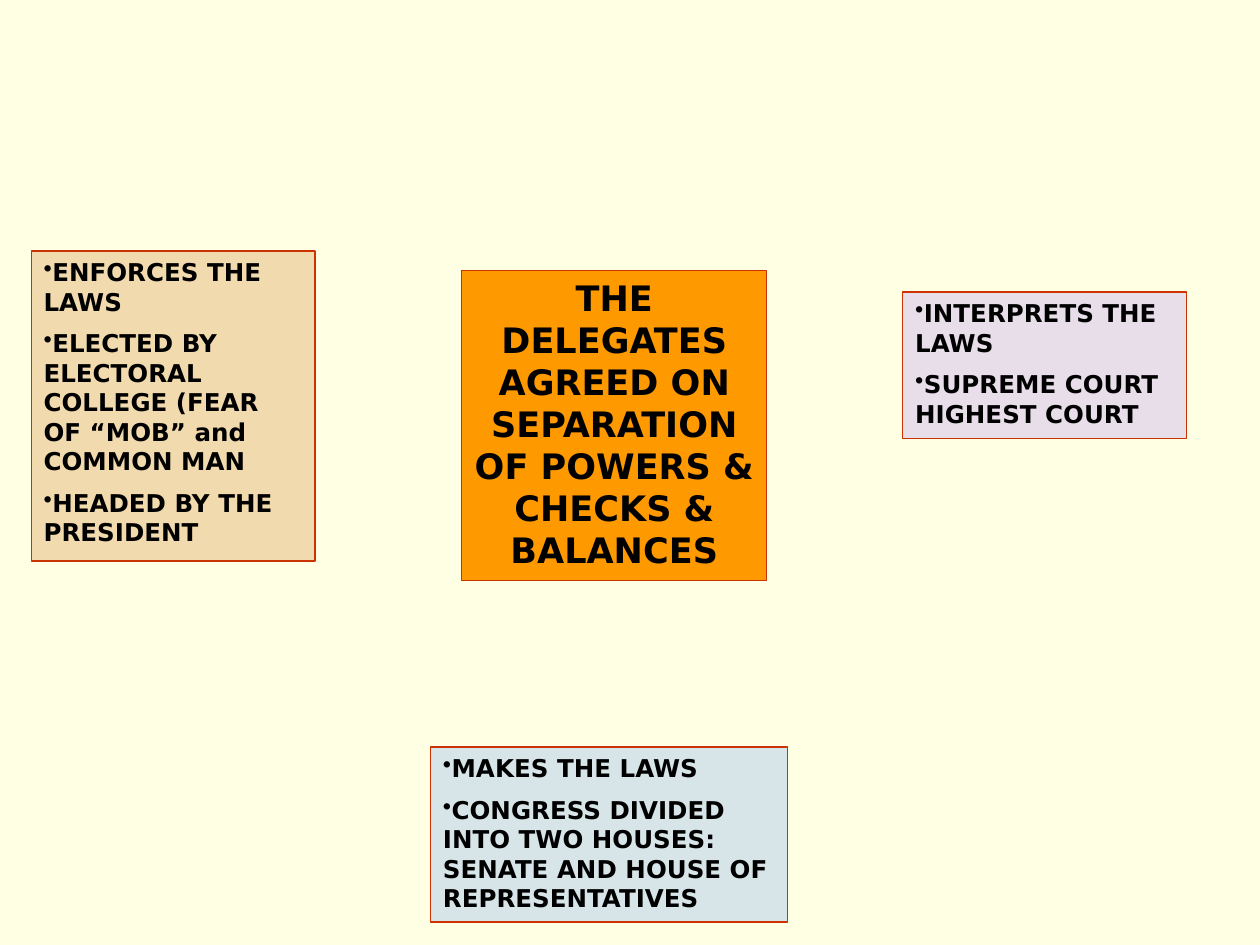
from dataclasses import dataclass

from lxml.etree import SubElement
from pptx import Presentation
from pptx.dml.color import RGBColor
from pptx.enum.shapes import MSO_SHAPE
from pptx.enum.text import MSO_ANCHOR, PP_ALIGN
from pptx.oxml.ns import qn
from pptx.slide import Slide
from pptx.util import Cm, Pt


@dataclass(frozen=True)
class Theme:
    font: str = "DejaVu Sans"
    background: str = "FFFFE4"
    text: str = "000000"
    border: str = "CC3300"
    executive: str = "F1DAAD"
    legislative: str = "D8E5E8"
    judicial: str = "E7DEEA"
    agreement: str = "FF9900"
    body_size: int = 14
    headline_size: int = 20
    border_width: float = 0.75


@dataclass(frozen=True)
class Panel:
    left: float
    top: float
    width: float
    height: float
    fill: str
    size: int
    lines: tuple[str, ...]
    bulleted: bool = True


THEME = Theme()

PANELS = (
    Panel(0.63, 5.06, 5.72, 6.25, THEME.executive, THEME.body_size, (
        "ENFORCES THE LAWS",
        "ELECTED BY ELECTORAL COLLEGE (FEAR OF “MOB” and COMMON MAN",
        "HEADED BY THE PRESIDENT",
    )),
    Panel(8.68, 15.06, 7.2, 3.53, THEME.legislative, THEME.body_size, (
        "MAKES THE LAWS",
        "CONGRESS DIVIDED INTO TWO HOUSES: SENATE AND HOUSE OF REPRESENTATIVES",
    )),
    Panel(18.2, 5.89, 5.72, 2.95, THEME.judicial, THEME.body_size, (
        "INTERPRETS THE LAWS",
        "SUPREME COURT HIGHEST COURT",
    )),
    Panel(9.31, 5.45, 6.15, 6.25, THEME.agreement, THEME.headline_size, (
        "THE DELEGATES AGREED ON SEPARATION OF POWERS & CHECKS & BALANCES",
    ), bulleted=False),
)


def draw_panel(page: Slide, panel: Panel) -> None:
    box = page.shapes.add_shape(
        MSO_SHAPE.RECTANGLE,
        Cm(panel.left), Cm(panel.top), Cm(panel.width), Cm(panel.height),
    )
    box.shadow.inherit = False
    box.fill.solid()
    box.fill.fore_color.rgb = RGBColor.from_string(panel.fill)
    box.line.color.rgb = RGBColor.from_string(THEME.border)
    box.line.width = Pt(THEME.border_width)
    frame = box.text_frame
    frame.word_wrap = True
    frame.vertical_anchor = MSO_ANCHOR.TOP
    for index, line in enumerate(panel.lines):
        para = frame.add_paragraph() if index else frame.paragraphs[0]
        para.text = line
        para.alignment = PP_ALIGN.LEFT if panel.bulleted else PP_ALIGN.CENTER
        para.space_before = Pt(panel.size / 2 if index else 0)
        para.font.name = THEME.font
        para.font.size = Pt(panel.size)
        para.font.bold = True
        para.font.color.rgb = RGBColor.from_string(THEME.text)
        if panel.bulleted:
            properties = para._p.get_or_add_pPr()
            bullet = SubElement(properties, qn("a:buChar"), char="•")
            properties.find(qn("a:defRPr")).addprevious(bullet)


def main() -> None:
    deck = Presentation()
    deck.slide_width, deck.slide_height = Cm(25.4), Cm(19.05)
    page = deck.slides.add_slide(deck.slide_layouts[6])
    page.background.fill.solid()
    page.background.fill.fore_color.rgb = RGBColor.from_string(THEME.background)
    for panel in PANELS:
        draw_panel(page, panel)
    deck.save("out.pptx")


if __name__ == "__main__":
    main()
